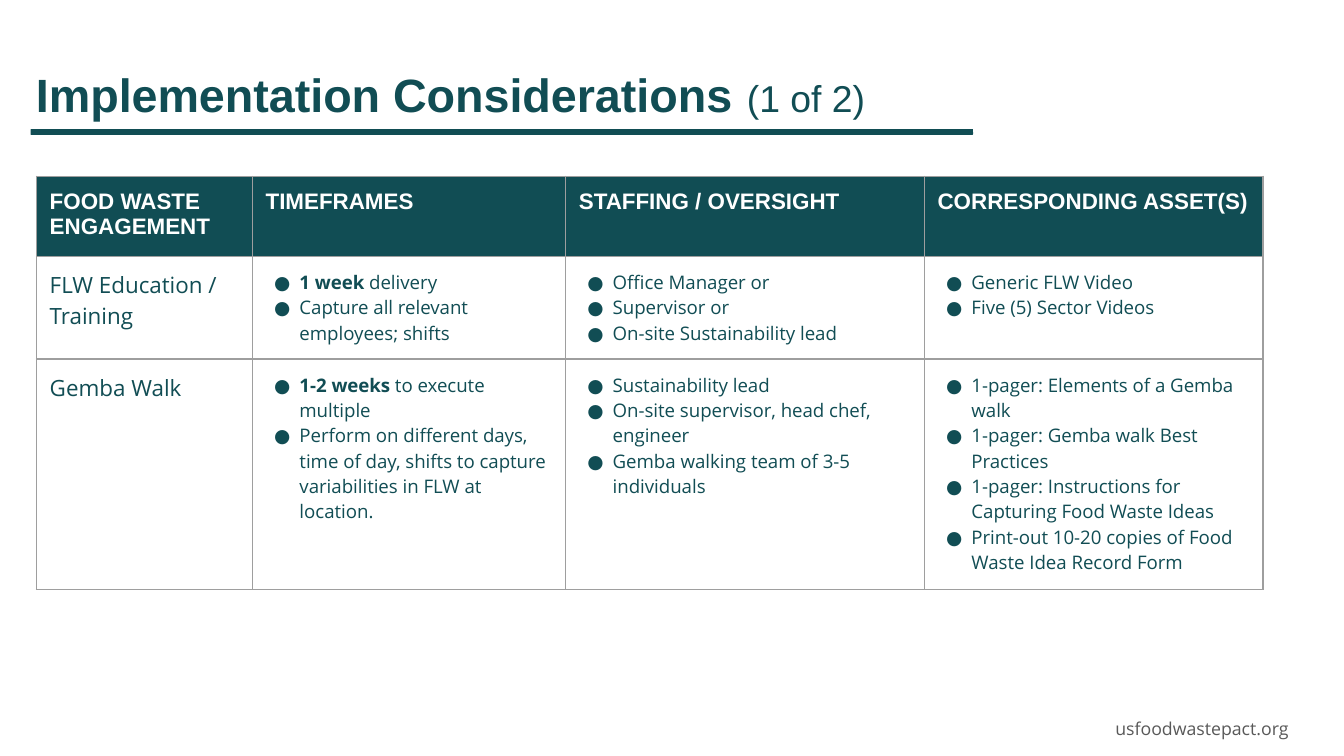
from lxml import etree
from pptx import Presentation
from pptx.dml.color import RGBColor
from pptx.enum.shapes import MSO_SHAPE
from pptx.enum.text import MSO_ANCHOR
from pptx.oxml.ns import qn
from pptx.util import Cm, Pt

ROUND_BAR = MSO_SHAPE.ROUNDED_RECTANGLE
TOP = MSO_ANCHOR.TOP
TEAL, WHITE, GRAY, BORDER = "114D54", "FFFFFF", "595959", "9E9E9E"
HEADING, BODY = "Arial", "Open Sans"
INSET = Cm(0.25)


def color(hex_code):
    return RGBColor.from_string(hex_code)


class SlideBuilder:
    """Draws styled elements on the current slide."""

    def __init__(self, slide):
        self.slide = slide

    def bar(self, left, top, width, height):
        bar = self.slide.shapes.add_shape(ROUND_BAR, Cm(left), Cm(top), Cm(width), Cm(height))
        bar.adjustments[0] = 0.11
        bar.shadow.inherit = False
        bar.fill.solid()
        bar.fill.fore_color.rgb = color(TEAL)
        bar.line.fill.background()

    def add_runs(self, paragraph, runs, font, hex_code, size=None):
        for text, run_size, bold in runs:
            run = paragraph.add_run()
            run.text = text
            run.font.bold = bold
            if run_size != size:
                run.font.size = Pt(run_size)
        paragraph.font.name = font
        paragraph.font.color.rgb = color(hex_code)
        if size:
            paragraph.font.size = Pt(size)

    def text(self, left, top, width, height, runs, font, hex_code, size=None,
             top_inset=INSET, line_spacing=1.0):
        box = self.slide.shapes.add_textbox(Cm(left), Cm(top), Cm(width), Cm(height))
        frame = box.text_frame
        frame.word_wrap = True
        frame.vertical_anchor = TOP
        frame.margin_left = frame.margin_right = frame.margin_bottom = INSET
        frame.margin_top = top_inset
        frame.paragraphs[0].line_spacing = line_spacing
        self.add_runs(frame.paragraphs[0], runs, font, hex_code, size)

    def bullet(self, paragraph):
        properties = paragraph._p.get_or_add_pPr()
        properties.set("marL", str(Cm(0.64)))
        properties.set("indent", str(-Cm(0.48)))
        bullet_color = etree.SubElement(properties, qn("a:buClr"))
        etree.SubElement(bullet_color, qn("a:srgbClr"), val=TEAL)
        etree.SubElement(properties, qn("a:buFont"), typeface=BODY)
        etree.SubElement(properties, qn("a:buChar"), char="●")

    def borders(self, cell):
        properties = cell._tc.get_or_add_tcPr()
        for side in ("a:lnL", "a:lnR", "a:lnT", "a:lnB"):
            line = etree.SubElement(properties, qn(side), w=str(Pt(0.75)))
            fill = etree.SubElement(line, qn("a:solidFill"))
            etree.SubElement(fill, qn("a:srgbClr"), val=BORDER)

    def cell(self, cell, content, is_header):
        cell.margin_left = cell.margin_right = INSET
        cell.margin_top = cell.margin_bottom = INSET
        self.borders(cell)
        if is_header:
            cell.fill.solid()
            cell.fill.fore_color.rgb = color(TEAL)
        else:
            cell.fill.background()
        frame = cell.text_frame
        if isinstance(content, str):
            font, hex_code = (HEADING, WHITE) if is_header else (BODY, TEAL)
            self.add_runs(frame.paragraphs[0], [(content, 12, is_header)], font, hex_code, 12)
            return
        for index, item in enumerate(content):
            paragraph = frame.add_paragraph() if index else frame.paragraphs[0]
            self.bullet(paragraph)
            parts = [(item, False)] if isinstance(item, str) else zip(item, (True, False))
            runs = [(text, 10, bold) for text, bold in parts]
            self.add_runs(paragraph, runs, BODY, TEAL, 10)

    def table(self, left, top, widths, heights, rows):
        frame = self.slide.shapes.add_table(len(rows), len(widths), Cm(left), Cm(top),
                                            Cm(sum(widths)), Cm(sum(heights)))
        table = frame.table
        table.first_row = table.horz_banding = False
        for column, width in zip(table.columns, widths):
            column.width = Cm(width)
        for row_index, (row, height) in enumerate(zip(rows, heights)):
            table.rows[row_index].height = Cm(height)
            for column_index, content in enumerate(row):
                self.cell(table.cell(row_index, column_index), content, row_index == 0)


CONSIDERATIONS = [
    ["FOOD WASTE ENGAGEMENT", "TIMEFRAMES", "STAFFING / OVERSIGHT", "CORRESPONDING ASSET(S)"],
    [
        "FLW Education / Training",
        [("1 week", " delivery"), "Capture all relevant employees; shifts"],
        ["Office Manager or", "Supervisor or", "On-site Sustainability lead"],
        ["Generic FLW Video", "Five (5) Sector Videos"],
    ],
    [
        "Gemba Walk",
        [("1-2 weeks ", "to execute multiple"),
         "Perform on different days, time of day, shifts to capture variabilities in FLW "
         "at location."],
        ["Sustainability lead", "On-site supervisor, head chef, engineer",
         "Gemba walking team of 3-5 individuals"],
        ["1-pager: Elements of a Gemba walk", "1-pager: Gemba walk Best Practices",
         "1-pager: Instructions for Capturing Food Waste Ideas",
         "Print-out 10-20 copies of Food Waste Idea Record Form"],
    ],
]


def main():
    presentation = Presentation()
    presentation.slide_width, presentation.slide_height = Cm(25.4), Cm(14.29)
    builder = SlideBuilder(presentation.slides.add_slide(presentation.slide_layouts[6]))
    for bar_left in (0.58, 1.42):
        builder.bar(bar_left, 2.44, 16.97, 0.11)
    builder.text(20.83, 13.28, 4.19, 0.48, [("usfoodwastepact.org", 9.5, False)],
                 BODY, GRAY, 9.5, line_spacing=1.15)
    title = [("Implementation Considerations", 25, True), (" ", 28, True), ("(1 of 2)", 20, False)]
    builder.text(0.43, 0.79, 23.67, 2.51, title, HEADING, TEAL, top_inset=Cm(0.35))
    builder.table(0.69, 3.33, (4.08, 5.92, 6.78, 6.4), (1.45, 1.94, 4.35), CONSIDERATIONS)
    presentation.save("out.pptx")


if __name__ == "__main__":
    main()
